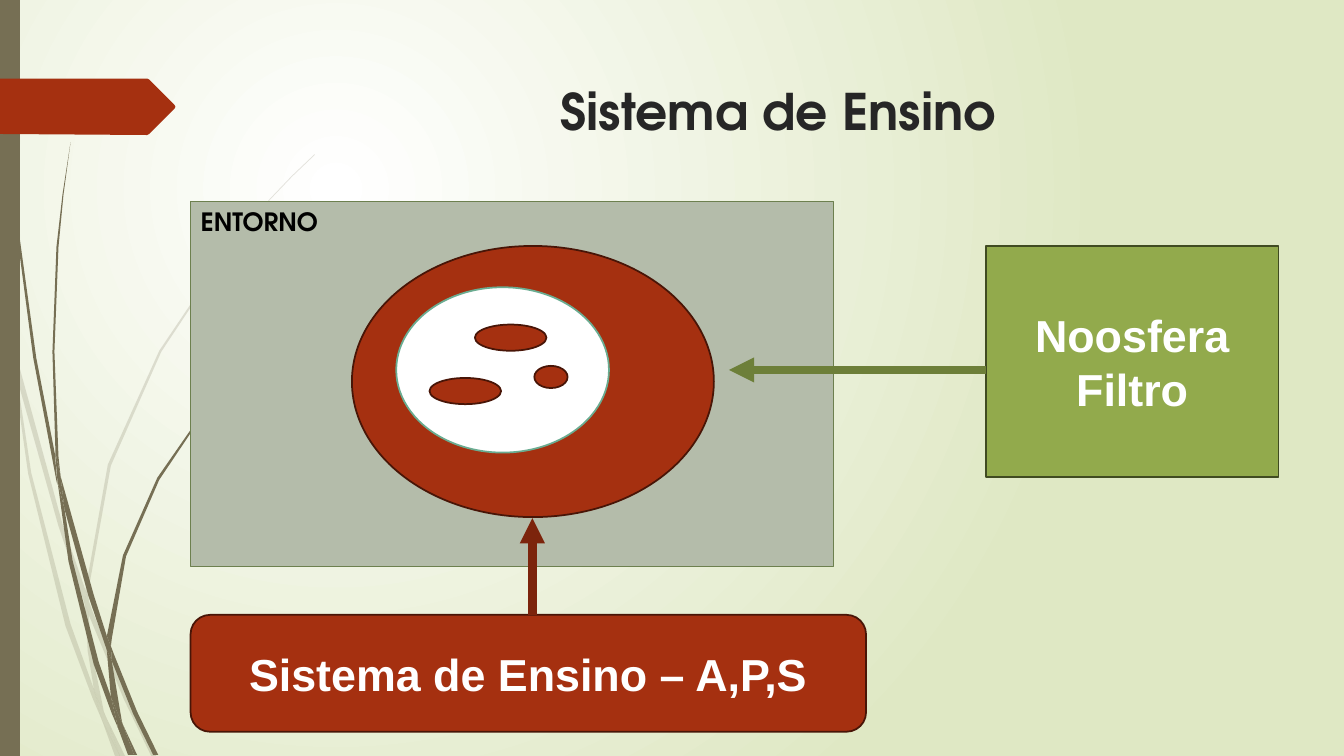
from dataclasses import dataclass

from lxml import etree
from pptx import Presentation
from pptx.dml.color import RGBColor
from pptx.enum.shapes import MSO_CONNECTOR, MSO_SHAPE
from pptx.enum.text import MSO_ANCHOR, MSO_AUTO_SIZE, PP_ALIGN
from pptx.oxml.ns import qn
from pptx.util import Inches, Pt

RECTANGLE = MSO_SHAPE.RECTANGLE
OVAL = MSO_SHAPE.OVAL
ROUNDED = MSO_SHAPE.ROUNDED_RECTANGLE
STRAIGHT = MSO_CONNECTOR.STRAIGHT
LEFT, CENTER = PP_ALIGN.LEFT, PP_ALIGN.CENTER
TOP, MIDDLE = MSO_ANCHOR.TOP, MSO_ANCHOR.MIDDLE

Point = tuple[float, float]


@dataclass(frozen=True)
class Theme:
    heading_font: str = "TeX Gyre Adventor"
    label_font: str = "Arial"
    title_size: int = 36
    label_size: int = 32
    body_size: int = 18
    white: str = "FFFFFF"
    black: str = "000000"
    title: str = "262626"
    background: str = "DFE8C4"
    stem: str = "766F54"
    red: str = "A53010"
    red_edge: str = "481507"
    red_arrow: str = "7C240C"
    green: str = "92AA4C"
    green_edge: str = "404B21"
    green_arrow: str = "6D7F39"
    gray: str = "B4BCAA"
    gray_edge: str = "6D804F"
    teal_edge: str = "6AAC91"


THEME = Theme()


@dataclass(frozen=True)
class Figure:
    preset: MSO_SHAPE
    left: float
    top: float
    width: float
    height: float
    fill: str = THEME.red
    edge: str = THEME.red_edge
    text: str = ""


@dataclass(frozen=True)
class Arrow:
    start: Point
    end: Point
    color: str


FIGURES = [
    Figure(OVAL, 3.49, 2.44, 3.59, 2.69),
    Figure(OVAL, 3.93, 2.85, 2.11, 1.64, THEME.white, THEME.teal_edge),
    Figure(OVAL, 4.71, 3.22, 0.71, 0.26),
    Figure(OVAL, 4.26, 3.75, 0.71, 0.26),
    Figure(OVAL, 5.3, 3.63, 0.33, 0.22),
    Figure(RECTANGLE, 9.78, 2.44, 2.9, 2.29, THEME.green, THEME.green_edge, "Noosfera\nFiltro"),
    Figure(ROUNDED, 1.89, 6.1, 6.7, 1.16, text="Sistema de Ensino – A,P,S"),
]
ARROWS = [
    Arrow((9.78, 3.67), (7.23, 3.67), THEME.green_arrow),
    Arrow((5.28, 6.1), (5.28, 5.14), THEME.red_arrow),
]

# Each stem piece is a closed outline through these points, in inches.
PALE_STEMS: list[list[Point]] = [
    [(0.11, 3.5), (0.09, 3.22), (0, 2.82), (0, 2.99), (0.1, 3.44)],
    [(0.58, 5.22), (0.84, 5.99), (0.85, 5.86), (0.62, 5.2), (0.14, 3.45), (0.17, 3.76)],
    [(0.92, 6.07), (0.88, 5.96), (0.88, 6.1), (1.23, 6.94), (1.5, 7.5), (1.55, 7.5), (1.27, 6.92)],
    [(1.19, 7.5), (1.24, 7.5), (1.05, 7.11)],
    [(0.93, 6.83), (0.7, 6.19), (0.31, 4.69), (0.17, 3.76), (0.11, 3.5), (0.28, 4.7),
     (0.65, 6.21), (0.92, 6.93), (1.01, 7.14), (0.99, 7.07)],
    [(0.84, 5.99), (0.87, 6.46), (0.93, 6.83), (0.96, 6.92), (1.05, 7.11), (1.03, 7.06),
     (0.91, 6.46), (0.88, 6.1), (0.88, 6.08)],
    [(0.88, 5.84), (1.1, 4.62), (1.6, 3.49), (2.29, 2.45), (2.68, 1.98), (2.9, 1.75),
     (3.12, 1.54), (3.12, 1.53), (2.89, 1.75), (2.68, 1.97), (2.28, 2.44), (1.58, 3.48),
     (1.07, 4.61), (0.85, 5.84), (0.85, 5.86), (0.88, 5.96)],
    [(1.01, 7.14), (1.14, 7.5), (1.19, 7.5)],
    [(0.88, 6.08), (0.88, 6.1), (0.88, 5.96), (0.85, 5.86), (0.84, 5.99)],
    [(0.96, 6.92), (0.93, 6.83), (0.99, 7.07), (1.01, 7.14), (1.19, 7.5), (1.05, 7.11)],
]
DARK_STEMS: list[list[Point]] = [
    [(0.07, 1.1), (0.17, 2.33), (0.33, 3.55), (0.56, 4.77), (0.57, 4.81), (0.55, 4.57),
     (0.55, 4.53), (0.36, 3.55), (0.19, 2.32), (0.08, 1.09), (0.05, 0.48), (0.04, 0),
     (0.03, 0), (0.04, 0.48)],
    [(0.88, 5.92), (1.06, 6.45), (1.06, 6.31), (0.93, 5.9), (0.6, 4.72), (0.64, 5.05)],
    [(1.13, 6.49), (1.1, 6.41), (1.11, 6.56), (1.32, 7.08), (1.52, 7.49), (1.57, 7.49), (1.36, 7.06)],
    [(1.1, 6.91), (0.98, 6.57), (0.72, 5.56), (0.64, 5.05), (0.57, 4.77), (0.68, 5.57),
     (0.93, 6.59), (1.11, 7.08), (1.17, 7.22), (1.16, 7.17)],
    [(0.6, 4.72), (0.58, 4.53), (0.54, 3.49), (0.58, 2.45), (0.63, 1.93), (0.7, 1.41),
     (0.62, 1.93), (0.56, 2.45), (0.52, 3.49), (0.55, 4.49)],
    [(1.33, 7.49), (1.36, 7.49), (1.22, 7.19)],
    [(0.57, 4.77), (0.64, 5.05), (0.6, 4.72), (0.55, 4.49), (0.55, 4.53)],
    [(1.11, 6.33), (1.25, 5.52), (1.58, 4.76), (2.05, 4.06), (2.31, 3.74), (2.45, 3.59),
     (2.61, 3.44), (2.45, 3.58), (2.31, 3.73), (2.04, 4.05), (1.56, 4.74), (1.22, 5.51),
     (1.06, 6.31), (1.1, 6.41)],
    [(1.17, 7.22), (1.27, 7.49), (1.31, 7.49)],
    [(1.06, 6.45), (1.1, 6.91), (1.16, 7.06), (1.22, 7.19), (1.21, 7.16), (1.11, 6.56), (1.09, 6.51)],
    [(1.06, 6.45), (1.09, 6.51), (1.11, 6.56), (1.1, 6.41), (1.06, 6.31)],
    [(1.16, 7.06), (1.1, 6.91), (1.16, 7.17), (1.17, 7.22), (1.3, 7.49), (1.33, 7.49), (1.22, 7.19)],
]
RIBBON: list[Point] = [
    (0, 0.78), (1.46, 0.78), (1.48, 0.79), (1.73, 1.04), (1.74, 1.06), (1.73, 1.08),
    (1.48, 1.33), (1.46, 1.34), (0, 1.33),
]


def paint(shape, fill: str, edge: str | None = None, edge_width: float = 1.25) -> None:
    shape.fill.solid()
    shape.fill.fore_color.rgb = RGBColor.from_string(fill)
    if edge is None:
        shape.line.fill.background()
    else:
        shape.line.color.rgb = RGBColor.from_string(edge)
        shape.line.width = Pt(edge_width)


def write(shape, text: str, *, font: str, size: int, color: str, align=CENTER, anchor=MIDDLE,
          space_before: float = 0) -> None:
    frame = shape.text_frame
    frame.text = text
    frame.word_wrap = True
    frame.auto_size = MSO_AUTO_SIZE.NONE
    frame.vertical_anchor = anchor
    for paragraph in frame.paragraphs:
        paragraph.alignment = align
        paragraph.space_before = Pt(space_before)
        style = paragraph.runs[0].font
        style.name, style.size, style.bold = font, Pt(size), True
        style.color.rgb = RGBColor.from_string(color)


def place(shape, left: float, top: float, width: float, height: float) -> None:
    """Move a placeholder and bring it to the front."""
    shape.left, shape.top = Inches(left), Inches(top)
    shape.width, shape.height = Inches(width), Inches(height)
    shape.element.getparent().append(shape.element)


def add_outline(shapes, points: list[Point], color: str, opacity: int = 100) -> None:
    corners = [(Inches(x), Inches(y)) for x, y in points]
    builder = shapes.build_freeform(*corners[0])
    builder.add_line_segments(corners[1:], close=True)
    shape = builder.convert_to_shape()
    shape.shadow.inherit = False
    paint(shape, color)
    if opacity < 100:
        tint = shape.element.spPr.find(qn("a:solidFill"))[0]
        etree.SubElement(tint, qn("a:alpha"), val=str(opacity * 1000))


def add_figure(slide, figure: Figure) -> None:
    shape = slide.shapes.add_shape(figure.preset, Inches(figure.left), Inches(figure.top),
                                   Inches(figure.width), Inches(figure.height))
    shape.shadow.inherit = False
    paint(shape, figure.fill, figure.edge)
    if figure.text:
        write(shape, figure.text, font=THEME.label_font, size=THEME.label_size, color=THEME.white)


def add_arrow(slide, arrow: Arrow) -> None:
    ends = [Inches(value) for value in arrow.start + arrow.end]
    connector = slide.shapes.add_connector(STRAIGHT, *ends)
    connector.line.color.rgb = RGBColor.from_string(arrow.color)
    connector.line.width = Pt(6)
    etree.SubElement(connector.line._get_or_add_ln(), qn("a:tailEnd"), type="triangle")
    etree.SubElement(connector.element.spPr, qn("a:effectLst"))


def set_background(slide) -> None:
    """Fill with a radial gradient, white in the upper left."""
    fill = slide.background.fill
    fill.gradient()
    for stop, position, color in zip(fill.gradient_stops, (0, 1), (THEME.white, THEME.background)):
        stop.position = position
        stop.color.rgb = RGBColor.from_string(color)
    gradient = next(slide.element.iter(qn("a:gradFill")))
    gradient.remove(gradient.find(qn("a:lin")))
    circle = etree.SubElement(gradient, qn("a:path"), {"path": "circle"})
    etree.SubElement(circle, qn("a:fillToRect"), l="50000", t="50000", r="100000", b="100000")


def main() -> None:
    presentation = Presentation()
    presentation.slide_width, presentation.slide_height = Inches(13.33), Inches(7.5)
    slide = presentation.slides.add_slide(presentation.slide_layouts[1])
    set_background(slide)
    for stems, opacity in ((PALE_STEMS, 20), (DARK_STEMS, 100)):
        group = slide.shapes.add_group_shape()
        for points in stems:
            add_outline(group.shapes, points, THEME.stem, opacity)
    add_outline(slide.shapes, [(0, 0), (0.2, 0), (0.2, 7.5), (0, 7.5)], THEME.stem)
    add_outline(slide.shapes, RIBBON, THEME.red)

    title, body = slide.shapes.title, slide.placeholders[1]
    place(title, 2.84, 0.68, 9.75, 0.83)
    write(title, "Sistema de Ensino", font=THEME.heading_font, size=THEME.title_size, color=THEME.title)
    place(body, 1.89, 2, 6.38, 3.62)
    paint(body, THEME.gray, THEME.gray_edge, 0.75)
    write(body, "ENTORNO", font=THEME.heading_font, size=THEME.body_size, color=THEME.black,
          align=LEFT, anchor=TOP, space_before=10)
    properties = body.text_frame.paragraphs[0]._p.get_or_add_pPr()
    properties.set("marL", "0")
    properties.set("indent", "0")
    etree.SubElement(properties, qn("a:buNone"))

    for figure in FIGURES:
        add_figure(slide, figure)
    for arrow in ARROWS:
        add_arrow(slide, arrow)
    presentation.save("out.pptx")


if __name__ == "__main__":
    main()
